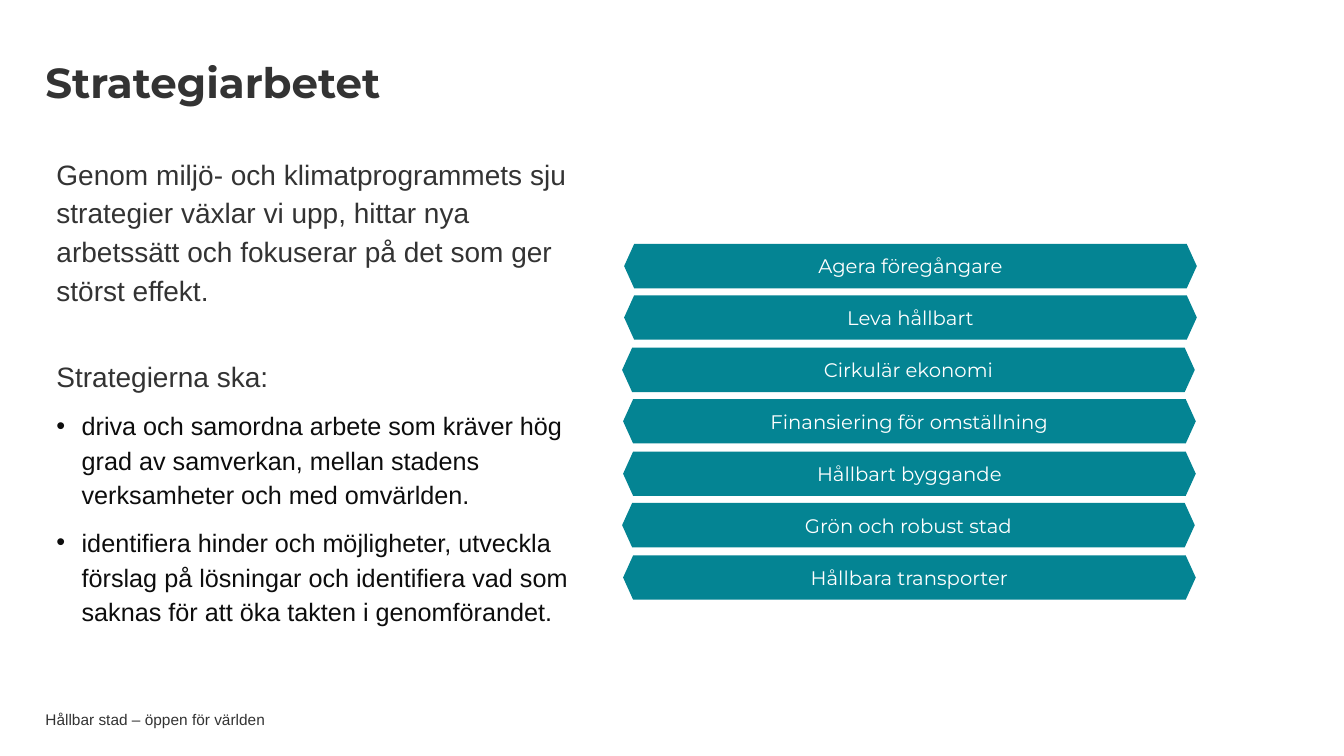
from lxml import etree
from pptx import Presentation
from pptx import util as u
from pptx.dml.color import RGBColor
from pptx.enum import text
from pptx.oxml.ns import qn

PX = 9144  # EMU per px, 100 px to the inch
COLOURS = {"ink": "333333", "list": "0D0D0D", "teal": "048493", "white": "FFFFFF"}


def set_all(target, values):
    for name, value in values.items():
        setattr(target, name, value)


class SlideBuilder:
    heading_font, body_font = "Montserrat", "Arial"

    def __init__(self, slide):
        self.s = slide

    def colour(self, name):
        return RGBColor.from_string(COLOURS[name])

    def place(self, sp, left, top, width, height):
        set_all(sp, dict(left=left * PX, top=top * PX, width=width * PX, height=height * PX))

    def frame(self, sp, x_inset=0, y_inset=0, anchor=text.MSO_ANCHOR.MIDDLE):
        tf = sp.text_frame
        set_all(tf, dict(margin_left=x_inset * PX, margin_right=x_inset * PX,
                         margin_top=y_inset * PX, margin_bottom=y_inset * PX,
                         word_wrap=True, auto_size=text.MSO_AUTO_SIZE.NONE,
                         vertical_anchor=anchor))
        return tf

    def add_words(self, p, words, size, colour, font, bold=False, **layout):
        set_all(p, {"alignment": text.PP_ALIGN.LEFT, **layout})
        r = p.add_run()
        r.text = words
        set_all(r.font, dict(size=u.Pt(size), name=font, bold=bold))
        r.font.color.rgb = self.colour(colour)

    def bullet(self, p, char=None, indent=0):
        pPr = p._p.get_or_add_pPr()
        pPr.set("marL", str(indent * PX))
        pPr.set("indent", str(-indent * PX))
        if char:
            etree.SubElement(pPr, qn("a:buFont")).set("typeface", self.body_font)
            etree.SubElement(pPr, qn("a:buChar")).set("char", char)
        else:
            etree.SubElement(pPr, qn("a:buNone"))

    def title(self, words, box):
        sp = self.s.shapes.title
        self.place(sp, *box)
        tf = self.frame(sp, y_inset=5)
        self.add_words(tf.paragraphs[0], words, 30, "ink", self.heading_font, True,
                       line_spacing=0.9)

    def body(self, items, box):
        sp = self.s.placeholders[1]
        self.place(sp, *box)
        tf = self.frame(sp, anchor=text.MSO_ANCHOR.TOP)
        for i, (words, char, before) in enumerate(items):
            p = tf.add_paragraph() if i else tf.paragraphs[0]
            self.bullet(p, char, 25 if char else 0)
            size, colour = (18, "list") if char else (20, "ink")
            self.add_words(p, words, size, colour, self.body_font, line_spacing=1.15,
                           space_before=u.Pt(before), space_after=u.Pt(3))

    def label(self, words, box):
        sp = self.s.shapes.add_textbox(0, 0, 0, 0)
        self.place(sp, *box)
        self.add_words(self.frame(sp).paragraphs[0], words, 11, "ink", self.body_font)

    def banner(self, words, left, top, width, height, tip=10):
        right, bottom, middle = left + width, top + height, top + height / 2
        outline = self.s.shapes.build_freeform(left + tip, top, scale=PX)
        outline.add_line_segments([(left, middle), (left + tip, bottom), (right - tip, bottom),
                                   (right, middle), (right - tip, top)], close=True)
        sp = outline.convert_to_shape()
        sp.shadow.inherit = False
        sp.fill.solid()
        sp.fill.fore_color.rgb = self.colour("teal")
        sp.line.fill.background()
        tf = self.frame(sp, 10, 5)
        self.add_words(tf.paragraphs[0], words, 14, "white", self.heading_font,
                       alignment=text.PP_ALIGN.CENTER)


def main():
    prs = Presentation()
    set_all(prs, dict(slide_width=1333 * PX, slide_height=750 * PX))
    page = SlideBuilder(prs.slides.add_slide(prs.slide_layouts[1]))

    # Footer and title
    page.label("Hållbar stad – öppen för världen", (45, 706, 945, 16))
    page.title("Strategiarbetet", (45, 44, 1003, 81))

    # Introduction and aims: words, bullet, space before
    page.body([
        ("Genom miljö- och klimatprogrammets sju strategier växlar vi upp, hittar nya "
         "arbetssätt och fokuserar på det som ger störst effekt.", None, 0),
        ("Strategierna ska:", None, 31),
        ("driva och samordna arbete som kräver hög grad av samverkan, mellan stadens "
         "verksamheter och med omvärlden.", "•", 6),
        ("identifiera hinder och möjligheter, utveckla förslag på lösningar och "
         "identifiera vad som saknas för att öka takten i genomförandet.", "•", 6),
    ], (56, 151, 517, 509))

    # The seven strategies, each with its left edge
    strategies = [("Agera föregångare", 619), ("Leva hållbart", 619),
                  ("Cirkulär ekonomi", 617), ("Finansiering för omställning", 618),
                  ("Hållbart byggande", 618), ("Grön och robust stad", 617),
                  ("Hållbara transporter", 618)]
    for row, (name, left) in enumerate(strategies):
        page.banner(name, left, 242 + row * 103 // 2, 568, 44)

    prs.save("out.pptx")


if __name__ == "__main__":
    main()
